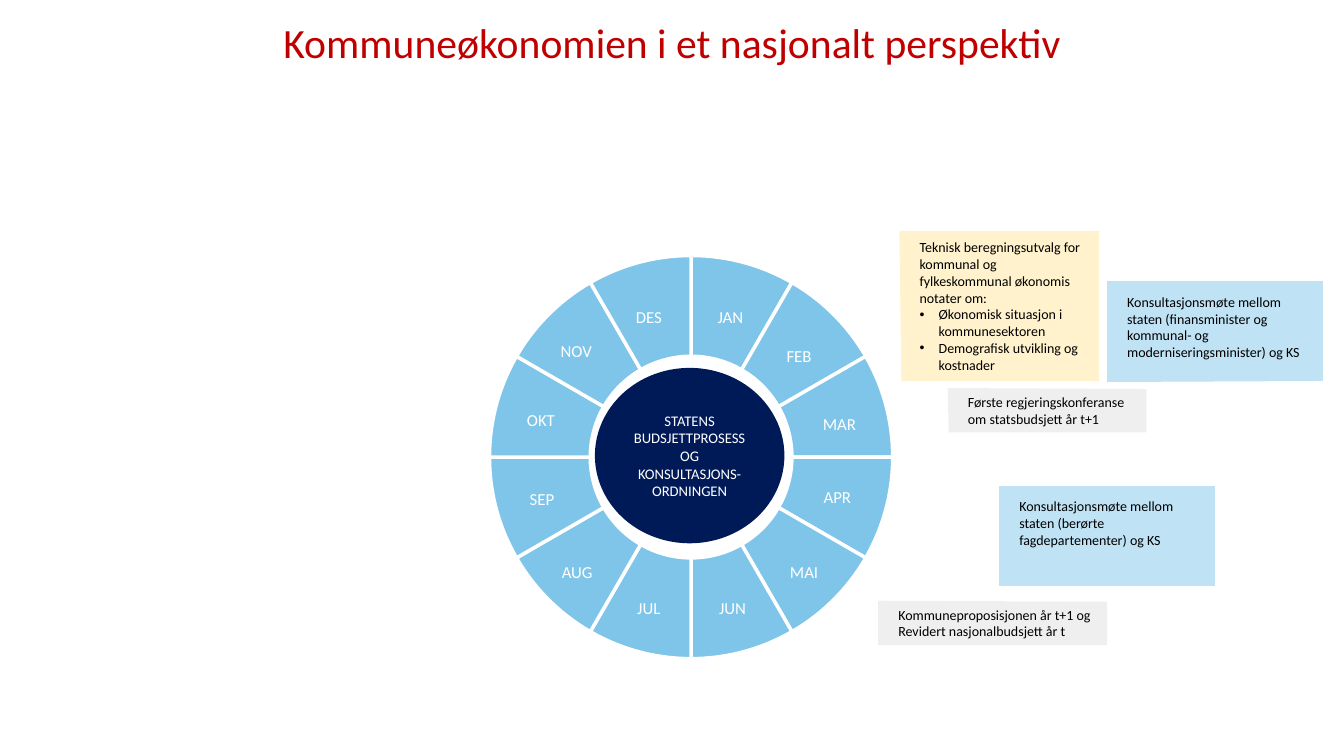
from math import cos, radians, sin

from lxml.etree import SubElement
from pptx import Presentation
from pptx.dml.color import RGBColor
from pptx.enum.shapes import MSO_SHAPE
from pptx.enum.text import MSO_ANCHOR, PP_ALIGN
from pptx.oxml.ns import qn
from pptx.util import Inches, Pt


def color(value):
    return RGBColor.from_string(value)


def outline(points):
    """Build a closed shape from corner points given in inches."""
    corners = [(Inches(x), Inches(y)) for x, y in points]
    builder = page.shapes.build_freeform(*corners[0], scale=1.0)
    builder.add_line_segments(corners[1:], close=True)
    shape = builder.convert_to_shape()
    shape.shadow.inherit = False
    shape.fill.solid()
    return shape


deck = Presentation()
deck.slide_width = Inches(13.33)
deck.slide_height = Inches(7.5)
page = deck.slides.add_slide(deck.slide_layouts[5])

# Title
title = page.shapes.title
title.left, title.top = Inches(0.92), Inches(0.04)
title.width, title.height = Inches(11.5), Inches(0.82)
title.text_frame.text = "Kommuneøkonomien i et nasjonalt perspektiv"
title.text_frame.vertical_anchor = MSO_ANCHOR.MIDDLE
para = title.text_frame.paragraphs[0]
para.alignment = PP_ALIGN.CENTER
para.line_spacing = 0.9
para.font.name = "Calibri"
para.font.size = Pt(29.7)
para.font.color.rgb = color("C00000")

# Year wheel: twelve ring segments, clockwise from the top
center_x, center_y = 6.855, 4.535
inner_radius, outer_radius = 1.0, 2.0
for month in range(12):
    angles = [radians(30 * month + step) for step in range(0, 31, 2)]
    ring = [(inner_radius, angle) for angle in angles]
    ring += [(outer_radius, angle) for angle in reversed(angles)]
    segment = outline([(center_x + radius * sin(angle), center_y - radius * cos(angle))
                       for radius, angle in ring])
    segment.fill.fore_color.rgb = color("7FC5E9")
    segment.line.color.rgb = color("FFFFFF")
    segment.line.width = Pt(2.5)

# Month names: left, top
months = {
    "JAN": (6.87, 2.99), "FEB": (7.55, 3.38), "MAR": (7.95, 4.06),
    "APR": (7.93, 4.78), "MAI": (7.6, 5.52), "JUN": (6.89, 5.88),
    "JUL": (6.06, 5.88), "AUG": (5.35, 5.52), "SEP": (5, 4.8),
    "OKT": (4.99, 4.02), "NOV": (5.34, 3.33), "DES": (6.06, 2.99),
}
for name, (left, top) in months.items():
    box = page.shapes.add_textbox(Inches(left), Inches(top), Inches(0.75), Inches(0.3))
    box.text_frame.word_wrap = True
    para = box.text_frame.paragraphs[0]
    para.text = name
    para.alignment = PP_ALIGN.CENTER
    para.font.name = "Calibri"
    para.font.size = Pt(12)
    para.font.color.rgb = color("FFFFFF")

# Hub of the wheel
hub = page.shapes.add_shape(MSO_SHAPE.OVAL, Inches(5.9), Inches(3.65), Inches(1.88), Inches(1.74))
hub.shadow.inherit = False
hub.fill.solid()
hub.fill.fore_color.rgb = color("001A58")
hub.line.fill.background()
hub.text_frame.word_wrap = True
hub.text_frame.vertical_anchor = MSO_ANCHOR.MIDDLE
para = hub.text_frame.paragraphs[0]
para.text = "STATENS BUDSJETTPROSESS OG KONSULTASJONS-ORDNINGEN"
para.alignment = PP_ALIGN.CENTER
para.font.name = "Calibri"
para.font.size = Pt(10.5)
para.font.color.rgb = color("FFFFFF")

# Notes: corners, fill, opacity in percent, anchor, top inset, lines (• marks a bullet)
middle, upper = MSO_ANCHOR.MIDDLE, MSO_ANCHOR.TOP
notes = [
    ([(8.92, 2.29), (10.9, 2.29), (10.9, 3.78), (8.94, 3.78)], "FFF2CC", 100, middle, 0.05,
     ["Teknisk beregningsutvalg for kommunal og fylkeskommunal økonomis notater om:",
      "•Økonomisk situasjon i kommunesektoren",
      "•Demografisk utvikling og kostnader"]),
    ([(8.71, 5.96), (10.98, 5.97), (10.98, 6.4), (8.71, 6.4)], "D9D9D9", 40, middle, 0.05,
     ["Kommuneproposisjonen år t+1 og Revidert nasjonalbudsjett år t"]),
    ([(9.4, 3.85), (11.37, 3.86), (11.37, 4.29), (9.41, 4.29)], "D9D9D9", 40, middle, 0.05,
     ["Første regjeringskonferanse om statsbudsjett år t+1"]),
    ([(10.98, 2.79), (13.12, 2.79), (13.12, 3.78), (10.98, 3.79)], "BFE2F4", 100, upper, 0.12,
     ["Konsultasjonsmøte mellom staten (finansminister og kommunal- og "
      "moderniseringsminister) og KS"]),
    ([(9.91, 4.82), (12.05, 4.82), (12.05, 5.81), (9.91, 5.81)], "BFE2F4", 100, upper, 0.12,
     ["Konsultasjonsmøte mellom staten (berørte fagdepartementer) og KS"]),
]
for corners, fill, opacity, anchor, top_inset, lines in notes:
    note = outline(corners)
    note.fill.fore_color.rgb = color(fill)
    note.line.fill.background()
    if opacity < 100:
        tint = note.fill._xPr.find(qn("a:solidFill"))[0]
        SubElement(tint, qn("a:alpha"), val=str(opacity * 1000))
    frame = note.text_frame
    frame.word_wrap = True
    frame.vertical_anchor = anchor
    frame.margin_left, frame.margin_right = Inches(0.2), Inches(0.1)
    frame.margin_top, frame.margin_bottom = Inches(top_inset), Inches(0.05)
    for index, line in enumerate(lines):
        para = frame.add_paragraph() if index else frame.paragraphs[0]
        para.text = line.lstrip("•")
        para.alignment = PP_ALIGN.LEFT
        if line.startswith("•"):
            properties = para._p.get_or_add_pPr()
            properties.set("marL", str(Inches(0.19)))
            properties.set("indent", str(-Inches(0.19)))
            SubElement(properties, qn("a:buFont"), typeface="Arial")
            SubElement(properties, qn("a:buChar"), char="•")
        para.font.name = "Calibri"
        para.font.size = Pt(10)
        para.font.color.rgb = color("000000")

deck.save("out.pptx")
